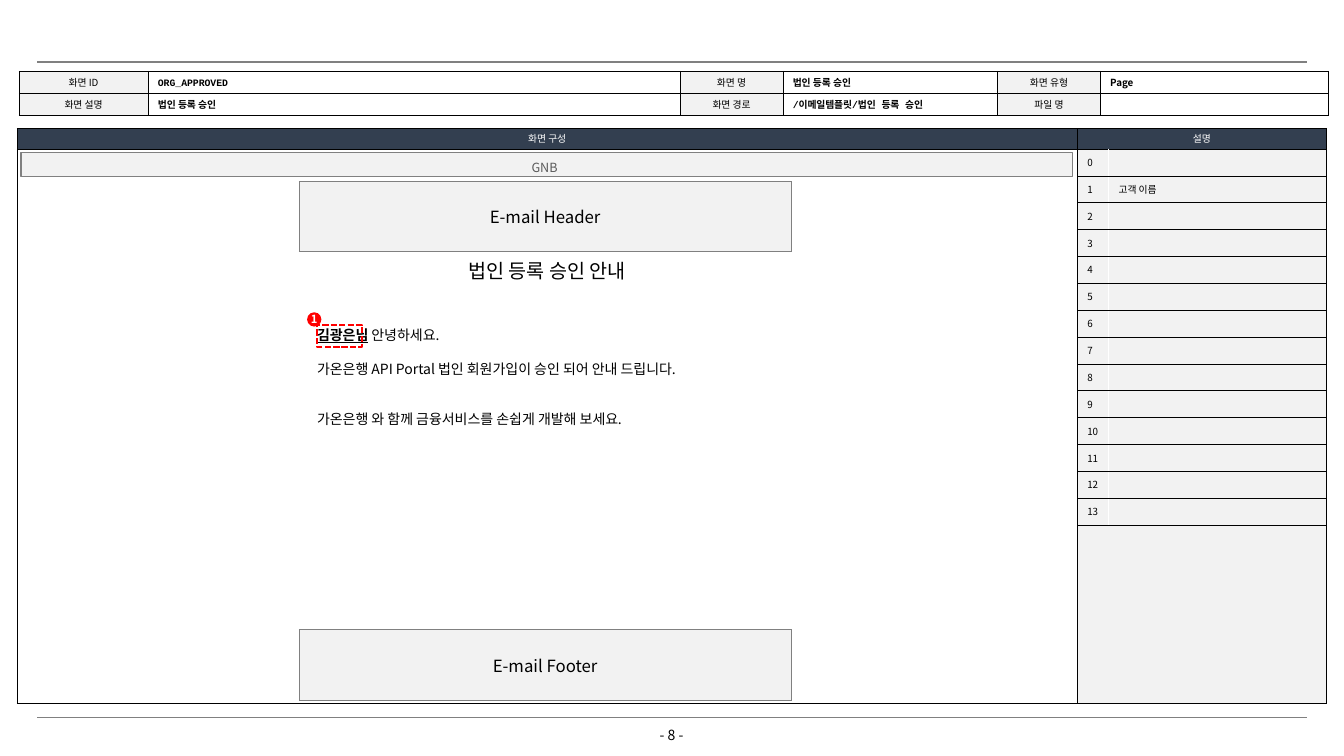
from dataclasses import dataclass

from lxml.etree import SubElement
from pptx import Presentation
from pptx.dml.color import RGBColor
from pptx.enum.dml import MSO_LINE
from pptx.enum.shapes import MSO_CONNECTOR, MSO_SHAPE
from pptx.enum.text import MSO_ANCHOR, PP_ALIGN
from pptx.oxml.ns import qn
from pptx.util import Cm, Pt


@dataclass(frozen=True)
class Theme:
    sans: str = "Noto Sans CJK KR"
    mono: str = "Courier New"
    black: str = "000000"
    white: str = "FFFFFF"
    navy: str = "333F50"
    panel: str = "F2F2F2"
    gray: str = "808080"
    muted: str = "595959"
    red: str = "FF0000"
    label: float = 7
    marker: float = 8
    nav: float = 9
    body: float = 10
    block: float = 12
    heading: float = 14


@dataclass(frozen=True)
class Box:
    left: float
    top: float
    width: float
    height: float

    def inner(self, dx, dy, width, height):
        return Box(self.left + dx, self.top + dy, width, height)

    def lengths(self):
        return Cm(self.left), Cm(self.top), Cm(self.width), Cm(self.height)


THEME = Theme()
CENTER = PP_ALIGN.CENTER
THIN_BLACK = (THEME.black, 0.25)
BLACK_GRID = dict.fromkeys("LRTB", THIN_BLACK)
GRAY_GRID = dict.fromkeys("LRTB", (THEME.gray, 0.5))
NAV_GRAY = (THEME.gray, 0.75)
RULE_GRAY = (THEME.gray, 1.5)


def style_run(run, size, color=THEME.black, bold=False, font=THEME.sans):
    run.font.size, run.font.bold, run.font.name = Pt(size), bold, font
    run.font.color.rgb = RGBColor.from_string(color)
    SubElement(run.font._element, qn("a:ea"), typeface=font)
    run.font._element.set("kern", "0")


def write(frame, text, size, align=PP_ALIGN.LEFT, **style):
    frame.text = text
    paragraph = frame.paragraphs[0]
    paragraph.alignment = align
    for run in paragraph.runs:
        style_run(run, size, **style)
    if not text:  # keeps empty rows at the height of small text
        paragraph._p.get_or_add_endParaRPr().set("sz", str(int(size * 100)))


def set_margins(frame, side=0.0):
    frame.margin_left = frame.margin_right = Cm(side)
    frame.margin_top = frame.margin_bottom = 0


def style_cell(cell, borders, fill=None):
    """Draw the given sides (L, R, T, B), hide the others, then fill."""
    properties = cell._tc.get_or_add_tcPr()
    for side in "LRTB":
        color, width = borders.get(side, (None, 0))
        line = SubElement(properties, qn(f"a:ln{side}"), w=str(Pt(width)))
        if color:
            solid = SubElement(line, qn("a:solidFill"))
            SubElement(solid, qn("a:srgbClr"), val=color)
        else:
            SubElement(line, qn("a:noFill"))
    if fill:
        cell.fill.solid()
        cell.fill.fore_color.rgb = RGBColor.from_string(fill)
    else:
        cell.fill.background()
    set_margins(cell, 0.25)
    cell.vertical_anchor = MSO_ANCHOR.MIDDLE


def add_grid(slide, box, widths, heights):
    table = slide.shapes.add_table(len(heights), len(widths), *box.lengths()).table
    table.first_row = table.horz_banding = False
    for column, width in zip(table.columns, widths):
        column.width = Cm(width)
    for row, height in zip(table.rows, heights):
        row.height = Cm(height)
    return table


def add_top_rule(slide, box):
    left, top, width, _ = box.lengths()
    rule = slide.shapes.add_connector(MSO_CONNECTOR.STRAIGHT, left, top, left + width, top)
    color, weight = RULE_GRAY
    rule.line.color.rgb = RGBColor.from_string(color)
    rule.line.width = Pt(weight)
    SubElement(rule._element.spPr, qn("a:effectLst"))


def add_outline(slide, kind, box, fill=None, line=None):
    shape = slide.shapes.add_shape(kind, *box.lengths())
    shape.shadow.inherit = False
    if fill:
        shape.fill.solid()
        shape.fill.fore_color.rgb = RGBColor.from_string(fill)
    else:
        shape.fill.background()
    if line:
        color, width = line
        shape.line.color.rgb = RGBColor.from_string(color)
        shape.line.width = Pt(width)
    else:
        shape.line.fill.background()
    set_margins(shape.text_frame)
    shape.text_frame.vertical_anchor = MSO_ANCHOR.MIDDLE
    return shape


def add_screen_info(slide, box):
    """Label cells in a table, with each value in a text box over its cell."""
    labels = [["화면 ID", "화면 명", "화면 유형"], ["화면 설명", "화면 경로", "파일 명"]]
    values = [["ORG_APPROVED", "법인 등록 승인", "Page"],
              ["법인 등록 승인", "/이메일템플릿/법인 등록 승인", ""]]
    widths = [3.25, 13.41, 2.59, 5.41, 2.59, 5.74]
    row_height = box.height / 2
    info = add_grid(slide, box, widths, [row_height] * 2)
    for r in range(2):
        for c in range(3):
            label, blank = info.cell(r, 2 * c), info.cell(r, 2 * c + 1)
            style_cell(label, BLACK_GRID, THEME.panel)
            write(label.text_frame, labels[r][c], THEME.label, CENTER)
            style_cell(blank, BLACK_GRID)
            write(blank.text_frame, "", THEME.label)
            if not values[r][c]:
                continue
            place = box.inner(sum(widths[:2 * c + 1]), r * row_height, widths[2 * c + 1], row_height)
            value = slide.shapes.add_textbox(*place.lengths()).text_frame
            value.word_wrap, value.vertical_anchor = True, MSO_ANCHOR.MIDDLE
            set_margins(value, 0.25)
            font = THEME.mono if values[r][c].startswith(("ORG", "/")) else THEME.sans
            write(value, values[r][c], THEME.label, bold=True, font=font)


def add_frame(slide, box, notes_width, header_height):
    frame = add_grid(slide, box, [box.width - notes_width, notes_width],
                     [header_height, box.height - header_height])
    for c, (heading, fill) in enumerate([("화면 구성", None), ("설명", THEME.panel)]):
        style_cell(frame.cell(0, c), BLACK_GRID, THEME.navy)
        write(frame.cell(0, c).text_frame, heading, THEME.label, CENTER, color=THEME.white)
        style_cell(frame.cell(1, c), BLACK_GRID, fill)
        write(frame.cell(1, c).text_frame, "", THEME.label)


def add_notes(slide, box, descriptions, count=14):
    number_width, divider = 0.79, (THEME.white, 0.5)
    notes = add_grid(slide, box, [number_width, box.width - number_width],
                     [box.height / count] * count)
    rules = {"T": THIN_BLACK, "B": THIN_BLACK}
    for number in range(count):
        pair = [(str(number), "R"), (descriptions.get(number, ""), "L")]
        for c, (text, divider_side) in enumerate(pair):
            cell = notes.cell(number, c)
            style_cell(cell, {**rules, divider_side: divider})
            write(cell.text_frame, text, THEME.label)


def add_email_block(slide, box, text):
    cell = add_grid(slide, box, [box.width], [box.height]).cell(0, 0)
    style_cell(cell, GRAY_GRID, THEME.panel)
    write(cell.text_frame, text, THEME.block, CENTER)


def add_message(slide, box):
    message = slide.shapes.add_textbox(*box.lengths()).text_frame
    message.word_wrap = True
    message.text = "\n".join([
        "김광은님",
        "가온은행 API Portal 법인 회원가입이 승인 되어 안내 드립니다.",
        "가온은행 와 함께 금융서비스를 손쉽게 개발해 보세요.",
    ])
    greeting = message.paragraphs[0]
    greeting.add_run().text = " 안녕하세요."
    for paragraph, gap in zip(message.paragraphs, [0, 12.3, 24]):
        paragraph.line_spacing, paragraph.space_before = Pt(12), Pt(gap)
        for run in paragraph.runs:
            style_run(run, THEME.body)
    greeting.runs[0].font.bold = greeting.runs[0].font.underline = True

    highlight = add_outline(slide, MSO_SHAPE.RECTANGLE, box.inner(0.24, 0.08, 1.14, 0.56),
                            line=(THEME.red, 1.5))
    highlight.line.dash_style = MSO_LINE.SQUARE_DOT
    marker = add_outline(slide, MSO_SHAPE.OVAL, box.inner(0, -0.23, 0.36, 0.36), THEME.red)
    marker.text_frame.word_wrap = False
    write(marker.text_frame, "1", THEME.marker, CENTER, color=THEME.white, bold=True)


def add_wireframe(slide, box):
    nav = add_outline(slide, MSO_SHAPE.RECTANGLE, box.inner(0.1, 0.1, 26.49, 0.61),
                      THEME.panel, NAV_GRAY)
    nav.text_frame.margin_top, nav.text_frame.margin_right = Cm(0.15), Cm(0.1)
    write(nav.text_frame, "GNB", THEME.nav, CENTER, color=THEME.muted)
    email, block = box.inner(7.11, 0.82, 12.4, 13.07), 1.77
    add_email_block(slide, email.inner(0, 0, email.width, block), "E-mail Header")
    add_email_block(slide, email.inner(0, email.height - block, email.width, block), "E-mail Footer")
    title = slide.shapes.title
    title.left, title.top, title.width, title.height = email.inner(3.64, 1.83, 5.21, 0.86).lengths()
    title.text_frame.word_wrap = False
    title.text_frame.vertical_anchor = MSO_ANCHOR.MIDDLE
    set_margins(title.text_frame)
    write(title.text_frame, "법인 등록 승인 안내", THEME.heading, CENTER)
    add_message(slide, email.inner(0.2, 3.53, 13.21, 2.82))


def add_page_footer(slide, box):
    bar = add_grid(slide, box, [box.width / 2] * 2, [box.height])
    for cell in bar.iter_cells():
        style_cell(cell, {"T": RULE_GRAY})
        write(cell.text_frame, "", THEME.label)
    number = slide.shapes.add_textbox(*box.inner(14.6, 0.23, 2.77, 0.43).lengths()).text_frame
    number.word_wrap = True
    set_margins(number)
    write(number, "- 8 -", THEME.body, CENTER)


def main():
    deck = Presentation()
    deck.slide_width, deck.slide_height = Cm(33.87), Cm(19.05)
    slide = deck.slides.add_slide(deck.slide_layouts[5])
    frame, notes_width, header_height = Box(0.43, 3.23, 33, 14.5), 6.28, 0.52
    screen_width = frame.width - notes_width
    add_top_rule(slide, Box(0.94, 1.57, 32, 0))
    add_screen_info(slide, Box(0.48, 1.79, 33, 1.12))
    add_frame(slide, frame, notes_width, header_height)
    add_notes(slide, frame.inner(screen_width, header_height, notes_width, 9.48), {1: "고객 이름"})
    add_wireframe(slide, frame.inner(0, header_height, screen_width, frame.height - header_height))
    add_page_footer(slide, Box(0.94, 18.08, 32, 0.9))
    deck.save("out.pptx")


if __name__ == "__main__":
    main()
